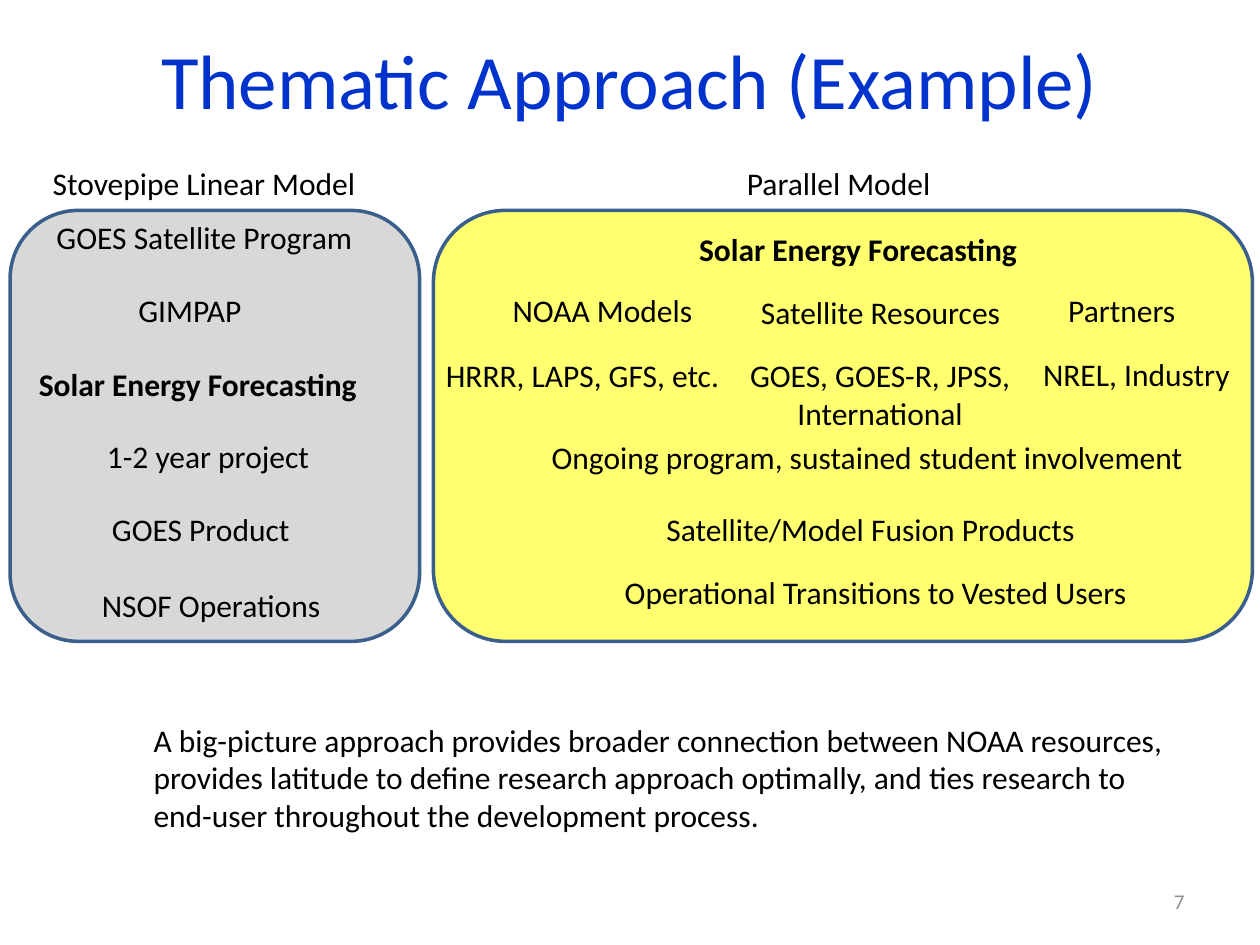
from dataclasses import dataclass

from lxml import etree
from pptx import Presentation
from pptx import util as u
from pptx.dml.color import RGBColor
from pptx.enum import shapes, text
from pptx.oxml.ns import qn


@dataclass(frozen=True)
class Theme:
    font: str = "Calibri"
    title_color: str = "0033CC"
    body_color: str = "000000"
    number_color: str = "8C8C8C"
    border: str = "3A5F8C"
    linear_fill: str = "808080"
    parallel_fill: str = "FFFF00"
    title_size: int = 44
    body_size: int = 18
    number_size: int = 12
    border_width: int = 2


LEFT, CENTER, RIGHT = text.PP_ALIGN.LEFT, text.PP_ALIGN.CENTER, text.PP_ALIGN.RIGHT
TOP, MIDDLE = text.MSO_ANCHOR.TOP, text.MSO_ANCHOR.MIDDLE
LINE_HEIGHT = 0.4
PANEL_TOP, PANEL_HEIGHT = 1.67, 3.42

# left, top, width, wording
LINEAR_STEPS = [
    (0.32, 1.25, 2.63, "Stovepipe Linear Model"),
    (0.35, 1.68, 2.57, "GOES Satellite Program"),
    (1.00, 2.26, 1.03, "GIMPAP"),
    (0.21, 2.85, 2.74, "Solar Energy Forecasting"),
    (0.75, 3.42, 1.82, "1-2 year project"),
    (0.79, 4.00, 1.63, "GOES Product"),
    (0.71, 4.60, 1.95, "NSOF Operations"),
]
PARALLEL_STEPS = [
    (5.83, 1.25, 1.67, "Parallel Model"),
    (5.45, 1.78, 2.74, "Solar Energy Forecasting"),
    (3.97, 2.26, 1.64, "NOAA Models"),
    (5.94, 2.28, 2.12, "Satellite Resources"),
    (8.38, 2.26, 1.06, "Partners"),
    (3.44, 2.78, 2.39, "HRRR, LAPS, GFS, etc."),
    (8.18, 2.77, 1.70, "NREL, Industry"),
    (4.28, 3.43, 5.27, "Ongoing program, sustained student involvement"),
    (5.19, 4.00, 3.48, "Satellite/Model Fusion Products"),
    (4.86, 4.50, 4.23, "Operational Transitions to Vested Users"),
]
THEME_NAME = "Solar Energy Forecasting"
CONCLUSION = (
    "A big-picture approach provides broader connection between NOAA resources, "
    "provides latitude to define research approach optimally, and ties research to "
    "end-user throughout the development process."
)


class SlideBuilder:
    def __init__(self, slide, theme):
        self.slide = slide
        self.theme = theme

    def panel(self, left, width, color, opacity):
        """Add a translucent rounded panel; opacity is a percentage."""
        panel = self.slide.shapes.add_shape(
            shapes.MSO_SHAPE.ROUNDED_RECTANGLE,
            *map(u.Inches, (left, PANEL_TOP, width, PANEL_HEIGHT)))
        panel.shadow.inherit = False
        panel.fill.solid()
        panel.fill.fore_color.rgb = RGBColor.from_string(color)
        tint = panel.fill._xPr.find(".//" + qn("a:srgbClr"))
        etree.SubElement(tint, qn("a:alpha"), val=str(opacity * 1000))
        panel.line.color.rgb = RGBColor.from_string(self.theme.border)
        panel.line.width = u.Pt(self.theme.border_width)

    def text(self, box, lines, size=None, color=None, bold=False, align=LEFT,
             anchor=TOP, wrap=False, indent=0):
        theme = self.theme
        frame = self.slide.shapes.add_textbox(*map(u.Inches, box)).text_frame
        frame.word_wrap = wrap
        frame.vertical_anchor = anchor
        font_format = {"name": theme.font, "size": u.Pt(size or theme.body_size),
                       "bold": bold}
        for index, line in enumerate(lines):
            paragraph = frame.add_paragraph() if index else frame.paragraphs[0]
            paragraph.alignment = align
            if indent:
                paragraph._p.get_or_add_pPr().set("marL", str(u.Inches(indent)))
            run = paragraph.add_run()
            run.text = line
            for name, value in font_format.items():
                setattr(run.font, name, value)
            run.font.color.rgb = RGBColor.from_string(color or theme.body_color)

    def steps(self, entries):
        for left, top, width, wording in entries:
            self.text((left, top, width, LINE_HEIGHT), [wording],
                      bold=wording == THEME_NAME)


def main():
    deck = Presentation()
    deck.slide_width, deck.slide_height = u.Inches(10), u.Inches(7.5)
    theme = Theme()
    builder = SlideBuilder(deck.slides.add_slide(deck.slide_layouts[6]), theme)

    builder.panel(0.08, 3.25, theme.linear_fill, 30)
    builder.panel(3.44, 6.5, theme.parallel_fill, 56)
    builder.text((0.5, 0, 9, 1.25), ["Thematic Approach (Example)"],
                 theme.title_size, theme.title_color, align=CENTER,
                 anchor=MIDDLE, wrap=True)
    builder.steps(LINEAR_STEPS)
    builder.steps(PARALLEL_STEPS)
    builder.text((5.84, 2.78, 2.29, 0.71), ["GOES, GOES-R, JPSS,", "International"],
                 align=CENTER)
    builder.text((0.75, 5.67, 8.75, 1.01), [CONCLUSION], wrap=True, indent=0.37)
    builder.text((7.17, 6.95, 2.33, LINE_HEIGHT), ["7"], theme.number_size,
                 theme.number_color, align=RIGHT, anchor=MIDDLE, wrap=True)
    deck.save("out.pptx")


if __name__ == "__main__":
    main()
